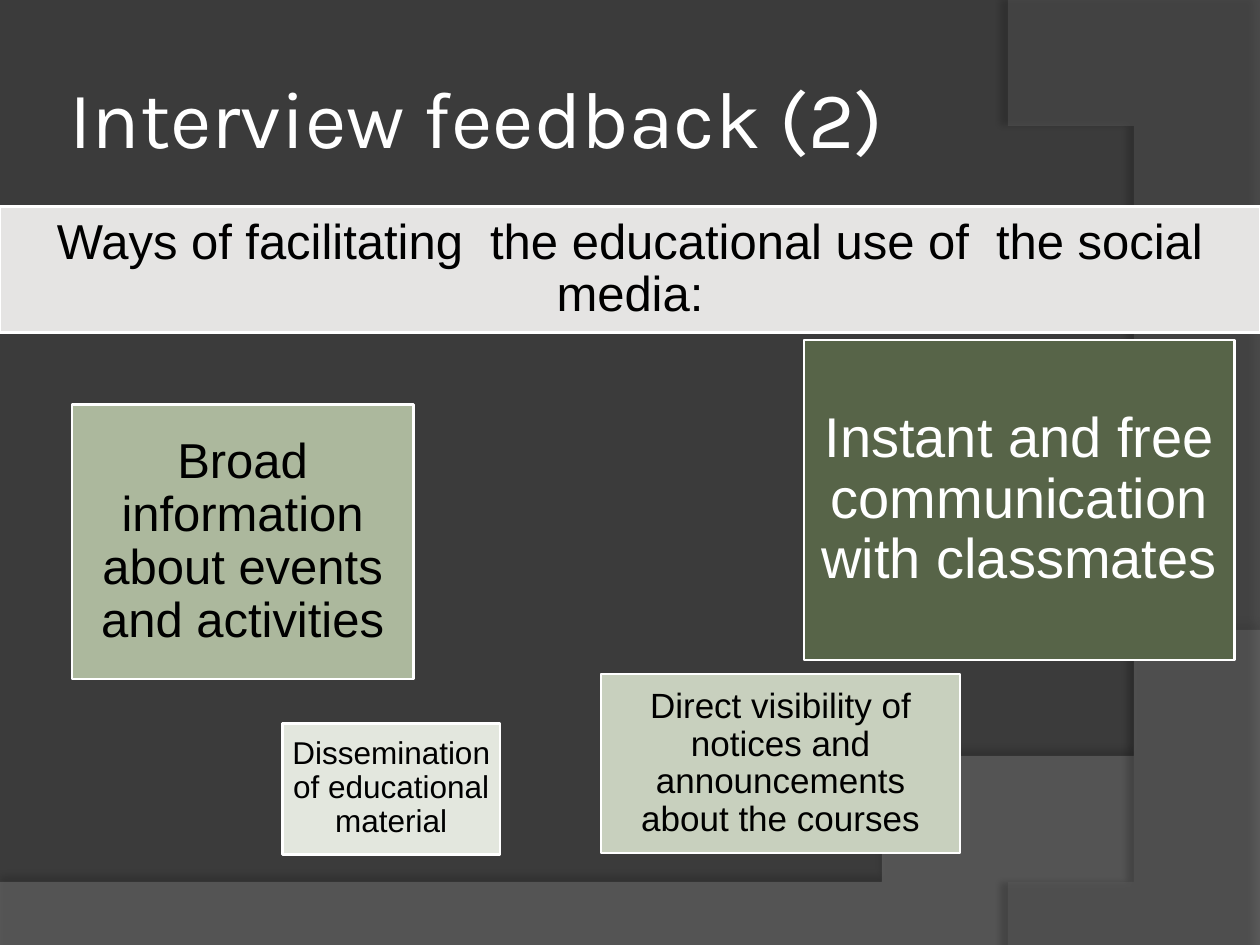
"""Build the interview feedback slide."""
from lxml import etree
from pptx import Presentation
from pptx.dml.color import RGBColor
from pptx.enum import shapes, text
from pptx.oxml.ns import qn
from pptx.util import Inches, Pt

TITLE = "Interview feedback (2)"
BOXES = [
    ("Broad information about events and activities",
     (0.57, 3.21, 2.71, 2.18), "ACB89D", "000000", 28, 0.12),
    ("Dissemination of educational material",
     (2.24, 5.74, 1.73, 1.04), "E3E7DE", "000000", 18, 0.07),
    ("Instant and free communication with classmates",
     (6.38, 2.7, 3.42, 2.54), "576448", "FFFFFF", 32, 0.13),
    ("Direct visibility of notices and announcements about the courses",
     (4.77, 5.35, 2.85, 1.42), "C8D0BE", "000000", 20, 0.08),
    ("Ways of facilitating  the educational use of  the social media:",
     (0, 1.64, 10, 1), "E5E4E3", "000000", 28, 0.12),
]
WAVES = [
    {"corners": [(0, 7.05), (0, 7.51), (10, 7.51)],
     "curve": [(10, 5.2), (5.59, 7.29), (3.91, 7.19), (0, 7.05)],
     "fill": "7F7F7F", "opacity": 45, "shadow": (35, 4, 3.5, 270)},
    {"corners": [(10, 0.02), (10, 7.5)],
     "curve": [(8.21, 7.5), (9.35, 6.19), (10.18, 3), (8, 0)],
     "fill": "5E5E5E", "opacity": 40, "shadow": (45, 4, 4, 180)},
]


def color(value):
    return RGBColor.from_string(value)


def paint(fill, value):
    fill.solid()
    fill.fore_color.rgb = color(value)


def set_alpha(clr, percent):
    etree.SubElement(clr, qn("a:alpha")).set("val", str(percent * 1000))


def bezier(points, steps=60):
    for i in range(steps + 1):
        t = i / steps
        weights = ((1 - t) ** 3, 3 * t * (1 - t) ** 2, 3 * t * t * (1 - t), t ** 3)
        yield tuple(sum(w * p[axis] for w, p in zip(weights, points))
                    for axis in (0, 1))


def add_wave(s, wave):
    start, *rest = wave["corners"]
    builder = s.shapes.build_freeform(*start, scale=Inches(1))
    builder.add_line_segments(rest + list(bezier(wave["curve"])), close=True)
    sp = builder.convert_to_shape()
    paint(sp.fill, wave["fill"])
    sp.line.fill.background()
    sp.shadow.inherit = False
    props = sp.element.spPr
    set_alpha(props.find(qn("a:solidFill"))[0], wave["opacity"])
    opacity, blur, distance, angle = wave["shadow"]
    shadow = etree.SubElement(
        props.find(qn("a:effectLst")), qn("a:outerShdw"),
        blurRad=str(Pt(blur)), dist=str(Pt(distance)),
        dir=str(angle * 60000), algn="ctr", rotWithShape="0")
    set_alpha(etree.SubElement(shadow, qn("a:srgbClr"), val="000000"), opacity)


def set_text(sp, content, inset, font, size, ink):
    tf = sp.text_frame
    tf.text = content
    tf.word_wrap = True
    tf.vertical_anchor = text.MSO_ANCHOR.MIDDLE
    tf.margin_left = tf.margin_right = Inches(inset)
    tf.margin_top = tf.margin_bottom = Inches(inset)
    p = tf.paragraphs[0]
    r = p.runs[0]
    r.font.name, r.font.size = font, Pt(size)
    r.font.color.rgb = color(ink)
    return p


def add_box(s, content, place, fill, ink, size, inset):
    sp = s.shapes.add_shape(shapes.MSO_SHAPE.RECTANGLE, *map(Inches, place))
    paint(sp.fill, fill)
    sp.line.color.rgb = color("FFFFFF")
    sp.line.width = Pt(1.5)
    sp.shadow.inherit = False
    p = set_text(sp, content, inset, "Arial", size, ink)
    p.alignment = text.PP_ALIGN.CENTER
    p.line_spacing = 0.9


def main():
    prs = Presentation()
    prs.slide_width, prs.slide_height = Inches(10), Inches(7.5)
    s = prs.slides.add_slide(prs.slide_layouts[6])
    paint(s.background.fill, "3B3B3B")
    for wave in WAVES:
        add_wave(s, wave)
    title = s.shapes.add_textbox(*map(Inches, (0.5, 0.3, 8.17, 1.25)))
    set_text(title, TITLE, 0.05, "Karla", 46, "FFFFFF")
    for box in BOXES:
        add_box(s, *box)
    prs.save("out.pptx")


if __name__ == "__main__":
    main()
